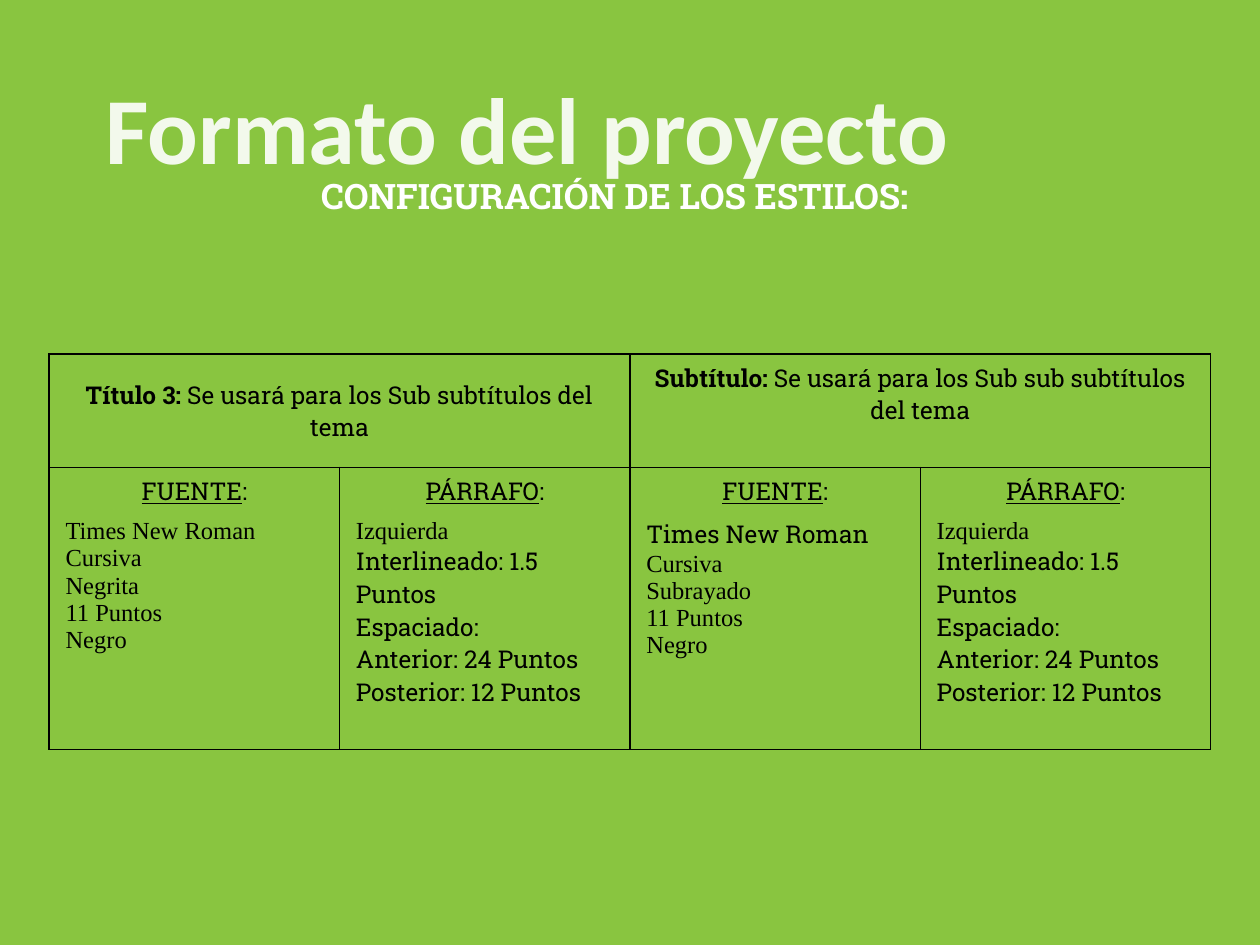
from lxml.etree import SubElement
from pptx import Presentation
from pptx.dml.color import RGBColor
from pptx.enum.text import MSO_ANCHOR, PP_ALIGN
from pptx.oxml import parse_xml
from pptx.oxml.ns import qn, nsdecls
from pptx.util import Inches, Pt

GREEN = RGBColor(0x89, 0xC5, 0x40)
WHITE = RGBColor(0xFF, 0xFF, 0xFF)
BLACK = RGBColor(0, 0, 0)
SLAB = "Roboto Slab"
TIMES = "Times New Roman"


class Deck:
    def __init__(self, slide):
        self.slide = slide
        fill = slide.background.fill
        fill.solid()
        fill.fore_color.rgb = GREEN

    def style(self, para, face, size, color, align=PP_ALIGN.LEFT):
        para.alignment = align
        font = para.font
        font.name = face
        font.size = Pt(size)
        font.color.rgb = color
        return font

    def text(self, box, words, face, size, align, alpha=None):
        frame = self.slide.shapes.add_textbox(*map(Inches, box)).text_frame
        frame.word_wrap = True
        frame.vertical_anchor = MSO_ANCHOR.MIDDLE
        para = frame.paragraphs[0]
        para.text = words
        font = self.style(para, face, size, WHITE, align)
        font.bold = True
        if alpha:
            tint = font.fill._xPr.find(qn("a:solidFill"))[0]
            SubElement(tint, qn("a:alpha"), val=str(alpha * 1000))

    def border(self, cell):
        props = cell._tc.get_or_add_tcPr()
        for spot, side in enumerate(("lnL", "lnR", "lnT", "lnB")):
            props.insert(spot, parse_xml(
                f'<a:{side} {nsdecls("a")} w="{Pt(1)}"><a:solidFill>'
                f'<a:srgbClr val="{BLACK}"/></a:solidFill></a:{side}>'))

    def table(self, box, rows, cols):
        grid = self.slide.shapes.add_table(
            len(rows), cols, *map(Inches, box)).table
        grid.first_row = grid.horz_banding = False
        for row, height in zip(grid.rows, rows):
            row.height = Inches(height)
        for cell in grid.iter_cells():
            cell.fill.background()
            cell.margin_left = cell.margin_right = Inches(0.13)
            cell.margin_top = cell.margin_bottom = Inches(0.06)
            self.border(cell)
        return grid

    def head(self, cell, label, rest, anchor):
        cell.vertical_anchor = anchor
        para = cell.text_frame.paragraphs[0]
        self.style(para, SLAB, 14, BLACK, PP_ALIGN.CENTER)
        para.add_run().text = label
        para.runs[0].font.bold = True
        para.add_run().text = rest

    def body(self, cell, label, lines):
        frame = cell.text_frame
        para = frame.paragraphs[0]
        self.style(para, SLAB, 14, BLACK, PP_ALIGN.CENTER)
        para.add_run().text = label
        para.runs[0].font.underline = True
        para.add_run().text = ":"
        para.space_after = Pt(6)
        for words, face in lines:
            para = frame.add_paragraph()
            para.text = words
            self.style(para, face, 14, BLACK)


def fonts(first, kind):
    rest = ("Cursiva", kind, "11 Puntos", "Negro")
    return [(TIMES, first)] + [(words, TIMES) for words in rest]


def main():
    show = Presentation()
    show.slide_width = Inches(10)
    show.slide_height = Inches(7.5)
    deck = Deck(show.slides.add_slide(show.slide_layouts[6]))

    deck.text((0.74, 0.21, 8.53, 1.6), "Formato del proyecto",
              "Calibri", 54, PP_ALIGN.LEFT, 90)
    grid = deck.table((0.39, 2.81, 9.22, 3.14), (0.9, 2.24), 4)
    heads = (
        ("Título 3: ", "Se usará para los Sub subtítulos del tema",
         MSO_ANCHOR.MIDDLE),
        ("Subtítulo: ", "Se usará para los Sub sub subtítulos del tema",
         MSO_ANCHOR.TOP),
    )
    specs = (fonts(TIMES, "Negrita"), fonts(SLAB, "Subrayado"))
    layout = [("Izquierda", TIMES)] + [(words, SLAB) for words in (
        "Interlineado: 1.5 Puntos", "Espaciado:",
        "Anterior: 24 Puntos", "Posterior: 12 Puntos")]
    for col, head, lines in zip((0, 2), heads, specs):
        grid.cell(0, col).merge(grid.cell(0, col + 1))
        deck.head(grid.cell(0, col), *head)
        deck.body(grid.cell(1, col), "FUENTE", lines)
        deck.body(grid.cell(1, col + 1), "PÁRRAFO", layout)
    deck.text((0.78, 1.33, 8.2, 0.44), "CONFIGURACIÓN DE LOS ESTILOS:",
              SLAB, 20, PP_ALIGN.CENTER)
    show.save("out.pptx")


if __name__ == "__main__":
    main()
